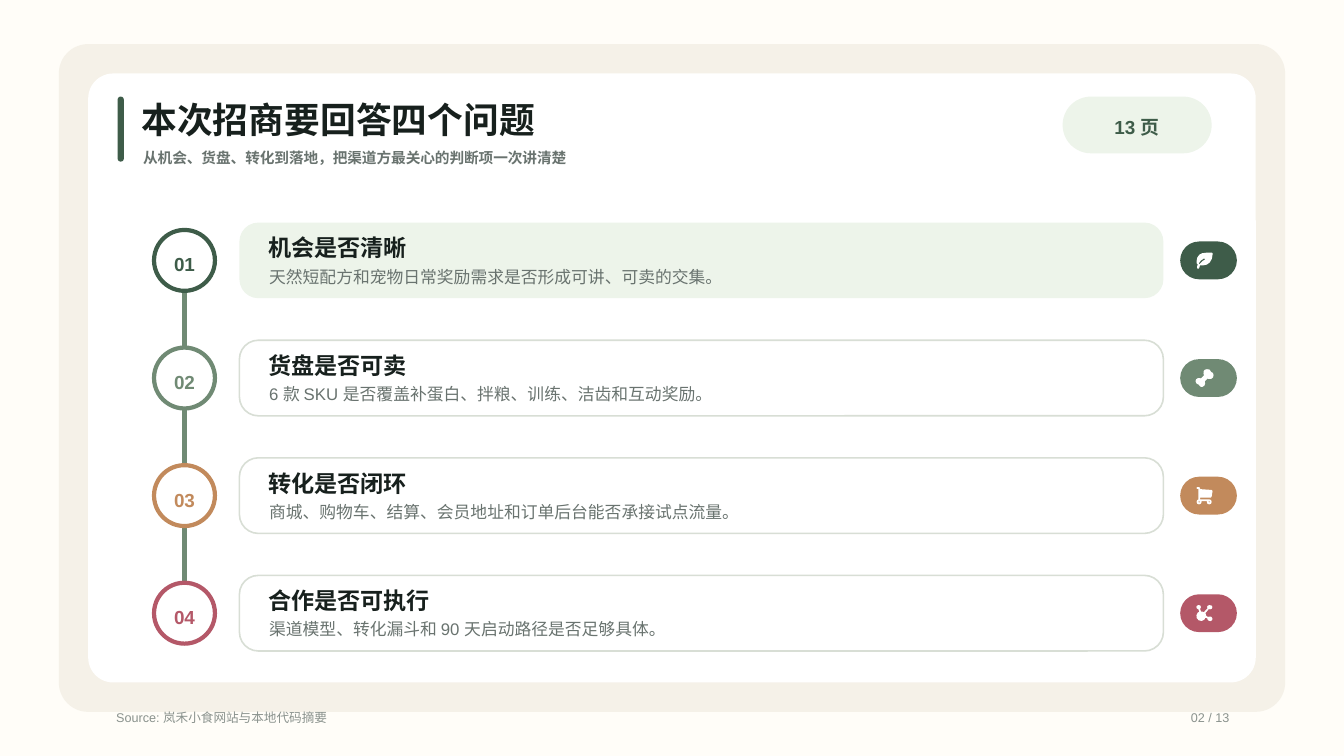
from lxml import etree
from pptx import Presentation
from pptx.dml.color import RGBColor
from pptx.enum.shapes import MSO_CONNECTOR, MSO_SHAPE
from pptx.enum.text import MSO_AUTO_SIZE, PP_ALIGN
from pptx.oxml.ns import qn
from pptx.util import Pt

ROUNDED = MSO_SHAPE.ROUNDED_RECTANGLE
OVAL = MSO_SHAPE.OVAL
RECTANGLE = MSO_SHAPE.RECTANGLE
STRAIGHT = MSO_CONNECTOR.STRAIGHT
FIT_SHAPE = MSO_AUTO_SIZE.SHAPE_TO_FIT_TEXT
LEFT, CENTER, RIGHT = PP_ALIGN.LEFT, PP_ALIGN.CENTER, PP_ALIGN.RIGHT

CREAM = RGBColor(0xFF, 0xFD, 0xF8)
SAND = RGBColor(0xF5, 0xF1, 0xE8)
WHITE = RGBColor(0xFF, 0xFF, 0xFF)
MINT = RGBColor(0xED, 0xF4, 0xEA)
BORDER = RGBColor(0xD8, 0xDE, 0xD5)
FOREST = RGBColor(0x3E, 0x5C, 0x49)
SAGE = RGBColor(0x70, 0x8A, 0x74)
CARAMEL = RGBColor(0xC2, 0x8A, 0x5C)
ROSE = RGBColor(0xB4, 0x58, 0x68)
INK = RGBColor(0x17, 0x20, 0x1D)
GREY = RGBColor(0x69, 0x73, 0x6F)
PALE_GREY = RGBColor(0x8A, 0x92, 0x8D)

# Icon outlines in tenths of a point; later contours are holes.
LEAF = [
    [(5, 66), (9, 42), (24, 20), (45, 9), (75, 5), (112, 5), (119, 8),
     (119, 18), (114, 48), (100, 74), (78, 90), (50, 96), (29, 96),
     (24, 113), (18, 120), (9, 117), (8, 108), (13, 88), (5, 80)],
    [(55, 48), (35, 62), (20, 82), (26, 88), (34, 78), (48, 64), (66, 54),
     (62, 48)],
]
BONE = [
    [(79, -3), (98, 0), (108, 16), (122, 24), (126, 40), (122, 56), (108, 67),
     (92, 67), (84, 64), (63, 85), (66, 98), (62, 112), (48, 123), (32, 122),
     (21, 108), (5, 100), (-3, 84), (1, 70), (13, 61), (28, 60), (36, 64),
     (58, 42), (54, 28), (56, 10), (66, 0)],
]
CART = [
    [(9, 0), (24, 0), (30, 7), (30, 14), (113, 20), (119, 27), (112, 69),
     (106, 74), (30, 74), (30, 87), (95, 87), (108, 92), (113, 105),
     (108, 118), (95, 123), (82, 118), (78, 105), (79, 99), (39, 99),
     (41, 105), (36, 118), (23, 123), (10, 118), (5, 105), (9, 93), (18, 88),
     (18, 12), (9, 12), (4, 6)],
    [(23, 99), (29, 105), (23, 111), (17, 105)],
    [(95, 99), (101, 105), (95, 111), (89, 105)],
]
NETWORK = [
    [(97, 3), (111, 5), (118, 16), (113, 28), (102, 33), (92, 31), (68, 60),
     (74, 79), (86, 87), (96, 84), (110, 86), (118, 98), (116, 110),
     (104, 117), (91, 114), (82, 103), (82, 98), (68, 92), (60, 107),
     (40, 116), (20, 111), (6, 95), (4, 75), (12, 58), (24, 50), (18, 32),
     (8, 28), (3, 17), (8, 6), (20, 2), (33, 7), (36, 19), (30, 29), (36, 48),
     (50, 50), (57, 53), (83, 25), (80, 15), (85, 6)],
]

QUESTIONS = [
    ("机会是否清晰", "天然短配方和宠物日常奖励需求是否形成可讲、可卖的交集。",
     FOREST, MINT, None, LEAF, 112.5, 342.75),
    ("货盘是否可卖", "6 款 SKU 是否覆盖补蛋白、拌粮、训练、洁齿和互动奖励。",
     SAGE, WHITE, BORDER, BONE, 112.5, 331.5),
    ("转化是否闭环", "商城、购物车、结算、会员地址和订单后台能否承接试点流量。",
     CARAMEL, WHITE, BORDER, CART, 112.5, 355),
    ("合作是否可执行", "渠道模型、转化漏斗和 90 天启动路径是否足够具体。",
     ROSE, WHITE, BORDER, NETWORK, 130.5, 301),
]
FIRST_CENTER, ROW_PITCH = 186, 84

deck = Presentation()
deck.slide_width, deck.slide_height = Pt(960), Pt(540)
page = deck.slides.add_slide(deck.slide_layouts[6])


def add_panel(kind, left, top, width, height, fill, line=None, weight=1, corner=None):
    panel = page.shapes.add_shape(kind, Pt(left), Pt(top), Pt(width), Pt(height))
    panel.shadow.inherit = False
    panel.fill.solid()
    panel.fill.fore_color.rgb = fill
    if line is None:
        panel.line.fill.background()
    else:
        panel.line.color.rgb = line
        panel.line.width = Pt(weight)
    if corner is not None:
        panel.adjustments[0] = corner


def add_text(text, left, top, width, height, size, color, bold=False, align=LEFT):
    box = page.shapes.add_textbox(Pt(left), Pt(top), Pt(width), Pt(height))
    frame = box.text_frame
    frame.margin_left = frame.margin_right = frame.margin_top = frame.margin_bottom = 0
    frame.word_wrap = False
    frame.auto_size = FIT_SHAPE
    para = frame.paragraphs[0]
    para.alignment = align
    span = para.add_run()
    span.text = text
    span.font.name = "Arial"
    span.font.size = Pt(size)
    span.font.bold = bold
    span.font.color.rgb = color


# Background and header
add_panel(RECTANGLE, 0, 0, 960, 540, CREAM)
add_panel(ROUNDED, 42, 31.5, 876, 477, SAND, corner=0.044)
add_panel(ROUNDED, 63, 52.5, 834, 435, WHITE, corner=0.041)
add_panel(ROUNDED, 84, 69, 4.5, 46.5, FOREST, corner=0.5)
add_text("本次招商要回答四个问题", 101, 69.75, 314.5, 41, 25.5, INK, bold=True)
add_text("从机会、货盘、转化到落地，把渠道方最关心的判断项一次讲清楚",
         102.25, 106.5, 337.5, 16.5, 10.5, GREY, bold=True)
add_panel(ROUNDED, 759, 69, 106.5, 40.5, MINT, corner=0.5)
add_text("13 页", 793, 82.75, 38.25, 21.5, 13.5, FOREST, bold=True, align=CENTER)

# Timeline behind the numbered circles
timeline = page.shapes.add_connector(STRAIGHT, Pt(131.75), Pt(171), Pt(131.75), Pt(439.5))
timeline.line.color.rgb = SAGE
timeline.line.width = Pt(3.75)
etree.SubElement(timeline._element.spPr, qn("a:effectLst"))

# Question rows
for index, (title, detail, accent, fill, border, icon, title_width,
            detail_width) in enumerate(QUESTIONS):
    center = FIRST_CENTER + index * ROW_PITCH
    add_panel(OVAL, 110, center - 21.75, 43.5, 43.5, WHITE, accent, weight=3)
    add_text(f"{index + 1:02d}", 122.4, center - 5.25, 18.75, 21.5, 13.5, accent,
             bold=True, align=CENTER)
    add_panel(ROUNDED, 171, center - 27, 660, 54, fill, border, weight=1.13, corner=0.25)
    add_text(title, 191.5, center - 19, title_width, 26.5, 16.5, INK, bold=True)
    add_text(detail, 192.25, center + 4.25, detail_width, 19.5, 12, GREY)
    add_panel(ROUNDED, 843, center - 13.5, 40.5, 27, accent, corner=0.5)

    outline, *holes = icon
    builder = page.shapes.build_freeform(*outline[0], scale=Pt(0.1))
    builder.add_line_segments(outline[1:])
    for hole in holes:
        builder.move_to(*hole[0])
        builder.add_line_segments(hole[1:])
    symbol = builder.convert_to_shape(Pt(854.25), Pt(center - 6))
    symbol.shadow.inherit = False
    symbol.fill.solid()
    symbol.fill.fore_color.rgb = WHITE
    symbol.line.fill.background()

# Footer
add_text("Source: 岚禾小食网站与本地代码摘要", 83, 507, 164, 14.5, 9, PALE_GREY)
add_text("02 / 13", 845.25, 507, 33, 14.5, 9, PALE_GREY, align=RIGHT)

deck.save("out.pptx")
